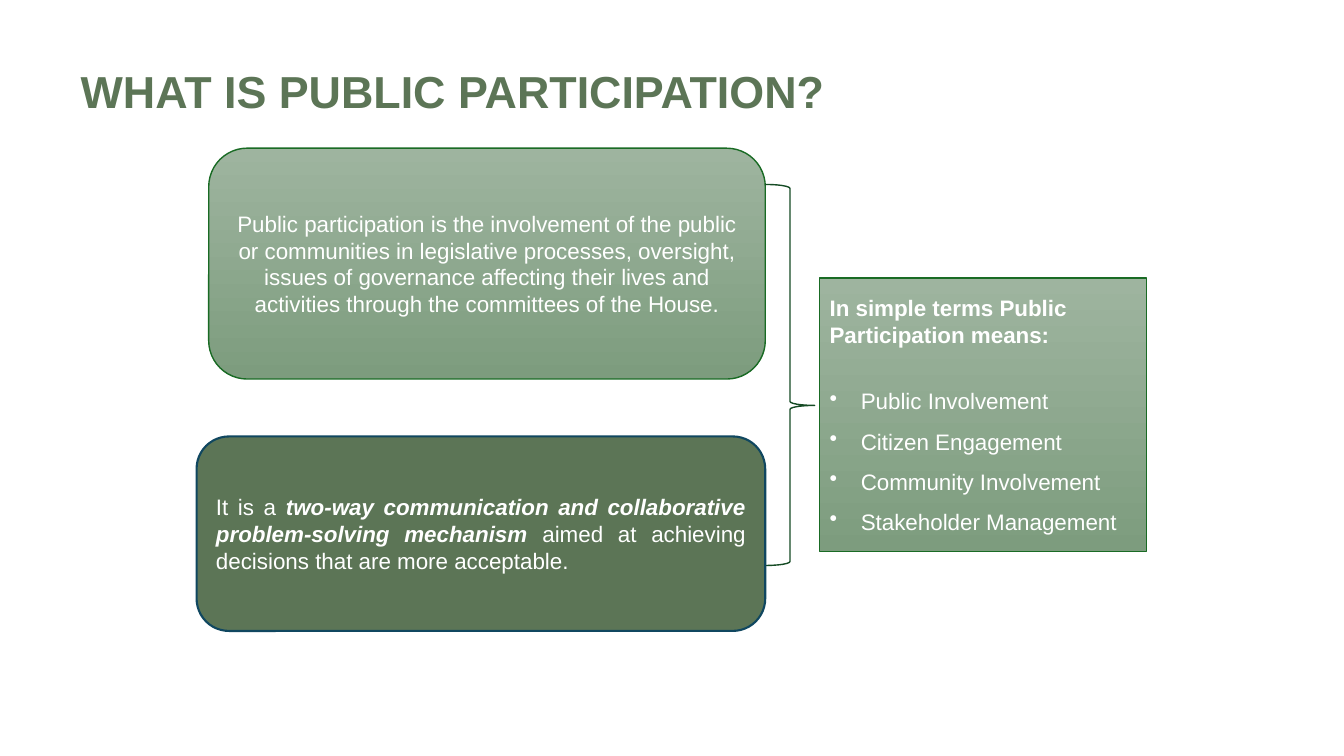
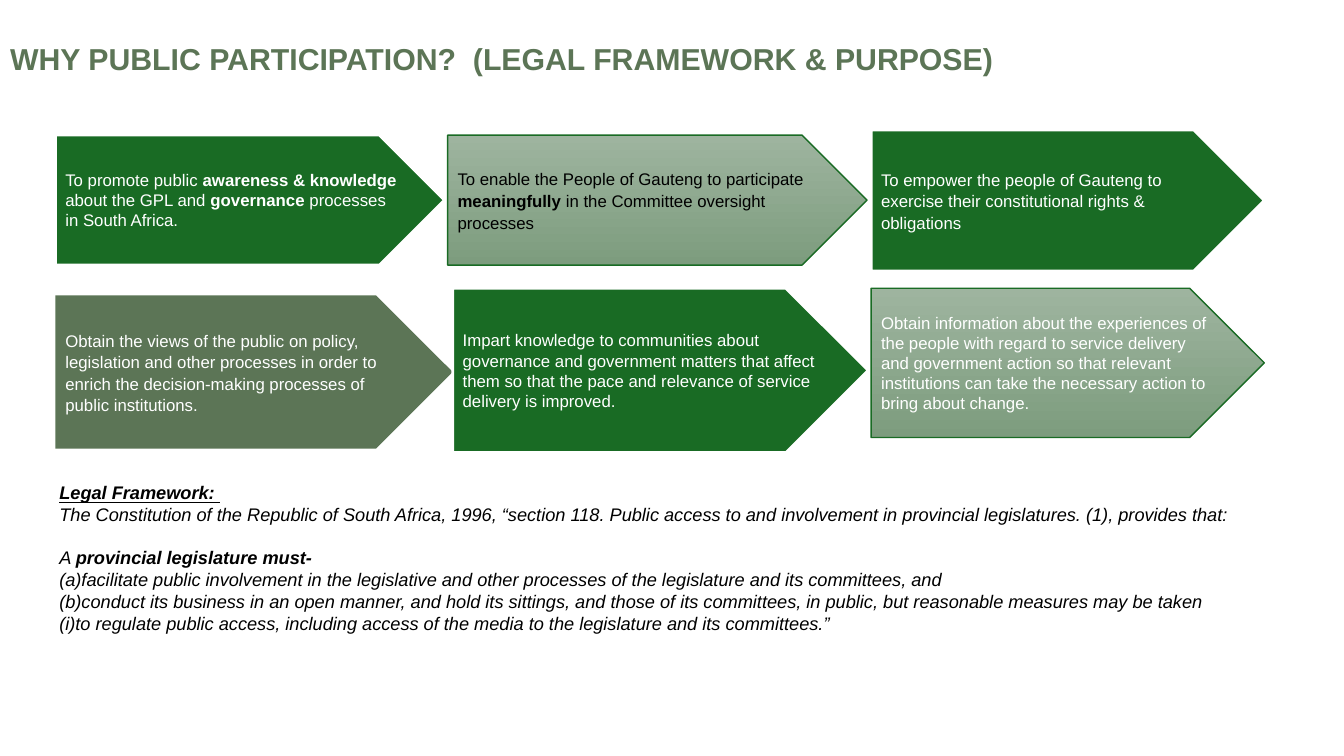
from lxml import etree
from pptx import Presentation
from pptx.dml.color import RGBColor
from pptx.enum.shapes import MSO_SHAPE
from pptx.enum.text import MSO_ANCHOR, MSO_AUTO_SIZE, PP_ALIGN
from pptx.oxml.ns import qn
from pptx.util import Inches, Pt

ROUND = MSO_SHAPE.ROUNDED_RECTANGLE
BRACE = MSO_SHAPE.RIGHT_BRACE
PANEL = MSO_SHAPE.ACTION_BUTTON_CUSTOM
ARROW = MSO_SHAPE.PENTAGON
LEFT, MID, JUST = PP_ALIGN.LEFT, PP_ALIGN.CENTER, PP_ALIGN.JUSTIFY

FONT = "Arial"
WHITE, BLACK = "FFFFFF", "000000"
SAGE, GREEN, DARK, NAVY = "5C7556", "196B24", "154B24", "104760"
FADE = ("9EB49F", "7D9C7E")
BOLD = {"bold": True}
ITAL = {"italic": True}
BOTH = BOLD | ITAL


def rgb(code):
    return RGBColor.from_string(code)


def apply(item, fmt):
    for key, val in fmt.items():
        setattr(item, key, val)


def place(item, at):
    apply(item, dict(zip(("left", "top", "width", "height"), map(Inches, at))))


def frame(shape, anchor=MSO_ANCHOR.MIDDLE):
    tf = shape.text_frame
    apply(tf, {"word_wrap": True, "auto_size": MSO_AUTO_SIZE.NONE,
               "vertical_anchor": anchor})
    return tf


def bullet(para):
    props = para._p.get_or_add_pPr()
    props.set("marL", str(Inches(0.31)))
    props.set("indent", str(-Inches(0.31)))
    etree.SubElement(props, qn("a:buChar")).set("char", "•")


def write(tf, paras, size, color, align=LEFT):
    for num, (runs, fmt) in enumerate(paras):
        para = tf.add_paragraph() if num else tf.paragraphs[0]
        fmt = dict(fmt)
        if fmt.pop("dot", False):
            bullet(para)
        apply(para, {"alignment": align} | fmt)
        for text, style in runs:
            run = para.add_run()
            run.text = text
            apply(run.font, {"name": FONT, "size": Pt(size)} | style)
            run.font.color.rgb = rgb(color)


def head(slide, text, at, size):
    title = slide.shapes.title
    place(title, at)
    write(frame(title), [([(text, BOLD)], {"line_spacing": 0.9})], size, SAGE)


def draw(slide, kind, at, fill=None, line=None, width=1):
    shape = slide.shapes.add_shape(kind, *map(Inches, at))
    shape.shadow.inherit = False
    if fill is None:
        shape.fill.background()
    elif fill == FADE:
        shape.fill.gradient()
        shape.fill.gradient_angle = 270
        for stop, code in zip(shape.fill.gradient_stops, FADE):
            stop.color.rgb = rgb(code)
    else:
        shape.fill.solid()
        shape.fill.fore_color.rgb = rgb(fill)
    if line:
        shape.line.color.rgb = rgb(line)
        shape.line.width = Pt(width)
    else:
        shape.line.fill.background()
    return shape


def plain(text):
    return [(text, {})]


def define(slide):
    head(slide, "WHAT IS PUBLIC PARTICIPATION?", (0.7, 0.21, 10.55, 1.45), 32)

    about = draw(slide, ROUND, (2.07, 1.47, 5.52, 2.29), FADE, GREEN)
    write(frame(about), [(plain(
        "Public participation is the involvement of the public or communities "
        "in legislative processes, oversight, issues of governance affecting "
        "their lives and activities through the committees of the House."),
        {})], 16, WHITE, MID)

    brace = draw(slide, BRACE, (7.59, 1.83, 0.49, 3.78), None, DARK)
    brace.adjustments[0], brace.adjustments[1] = 0.08, 0.58

    way = draw(slide, ROUND, (1.95, 4.33, 5.64, 1.93), SAGE, NAVY, 1.5)
    write(frame(way), [([
        ("It is a ", {}),
        ("two-way communication and collaborative problem-solving mechanism ",
         BOTH),
        ("aimed at achieving decisions that are more acceptable.", {})], {})],
        16, WHITE, JUST)

    terms = ("Public Involvement", "Citizen Engagement",
             "Community Involvement", "Stakeholder Management")
    paras = [([("In simple terms Public Participation means:", BOLD)],
              {"space_after": Pt(18.4)})]
    paras += [(plain(term), {"dot": True, "line_spacing": 1.5})
              for term in terms]
    panel = draw(slide, PANEL, (8.13, 2.76, 3.24, 2.71), FADE, GREEN)
    write(frame(panel), paras, 16, WHITE)


def explain(slide):
    head(slide, "WHY PUBLIC PARTICIPATION?  (LEGAL FRAMEWORK & PURPOSE)",
         (0, 0.19, 13.19, 0.83), 21.6)

    solid = (GREEN, WHITE, 2)
    soft = (FADE, GREEN, 1)
    aims = [
        ((0.55, 1.34, 3.86, 1.29), solid, WHITE, 1, [
            ("To promote public ", {}), ("awareness & knowledge ", BOLD),
            ("about the GPL and ", {}), ("governance ", BOLD),
            ("processes in South Africa.", {})]),
        ((4.44, 1.34, 4.16, 1.29), soft, BLACK, 1.07, [
            ("To enable the People of Gauteng to participate ", {}),
            ("meaningfully ", BOLD),
            ("in the Committee oversight processes", {})]),
        ((8.64, 1.29, 3.9, 1.4), solid, WHITE, 1.07, plain(
            "To empower the people of Gauteng to exercise their "
            "constitutional rights & obligations")),
        ((0.55, 2.93, 3.94, 1.52), (SAGE,), WHITE, 1.07, plain(
            "Obtain the views of the public on policy, legislation and other "
            "processes in order to enrich the decision-making processes of "
            "public institutions.")),
        ((4.49, 2.86, 4.12, 1.63), solid, WHITE, 1, plain(
            "Impart knowledge to communities about governance and government "
            "matters that affect them so that the pace and relevance of "
            "service delivery is improved.")),
        ((8.64, 2.86, 3.9, 1.48), soft, WHITE, 1, plain(
            "Obtain information about the experiences of the people with "
            "regard to service delivery and government action so that "
            "relevant institutions can take the necessary action to bring "
            "about change.")),
    ]
    for at, look, color, space, runs in aims:
        arrow = draw(slide, ARROW, at, *look)
        write(frame(arrow), [(runs, {"line_spacing": space})], 12, color)

    law = slide.shapes.add_textbox(*map(Inches, (0.49, 4.73, 12.05, 1.63)))
    write(frame(law, MSO_ANCHOR.TOP), [
        ([("Legal Framework: ", BOTH | {"underline": True})], {}),
        ([("The Constitution of the Republic of South Africa, 1996, “section "
           "118. Public access to and involvement in provincial legislatures. "
           "(1), provides that:", ITAL)], {"space_after": Pt(15)}),
        ([("A ", ITAL), ("provincial legislature must-", BOTH)], {}),
        ([("(a)facilitate public involvement in the legislative and other "
           "processes of the legislature and its committees, and", ITAL)], {}),
        ([("(b)conduct its business in an open manner, and hold its sittings, "
           "and those of its committees, in public, but reasonable measures "
           "may be taken", ITAL)], {}),
        ([("(i)to regulate public access, including access of the media to "
           "the legislature and its committees.”", ITAL)], {}),
    ], 13, BLACK, JUST)


def main():
    deck = Presentation()
    apply(deck, {"slide_width": Inches(13.33), "slide_height": Inches(7.5)})
    for build in (define, explain):
        build(deck.slides.add_slide(deck.slide_layouts[5]))
    deck.save("out.pptx")


if __name__ == "__main__":
    main()
